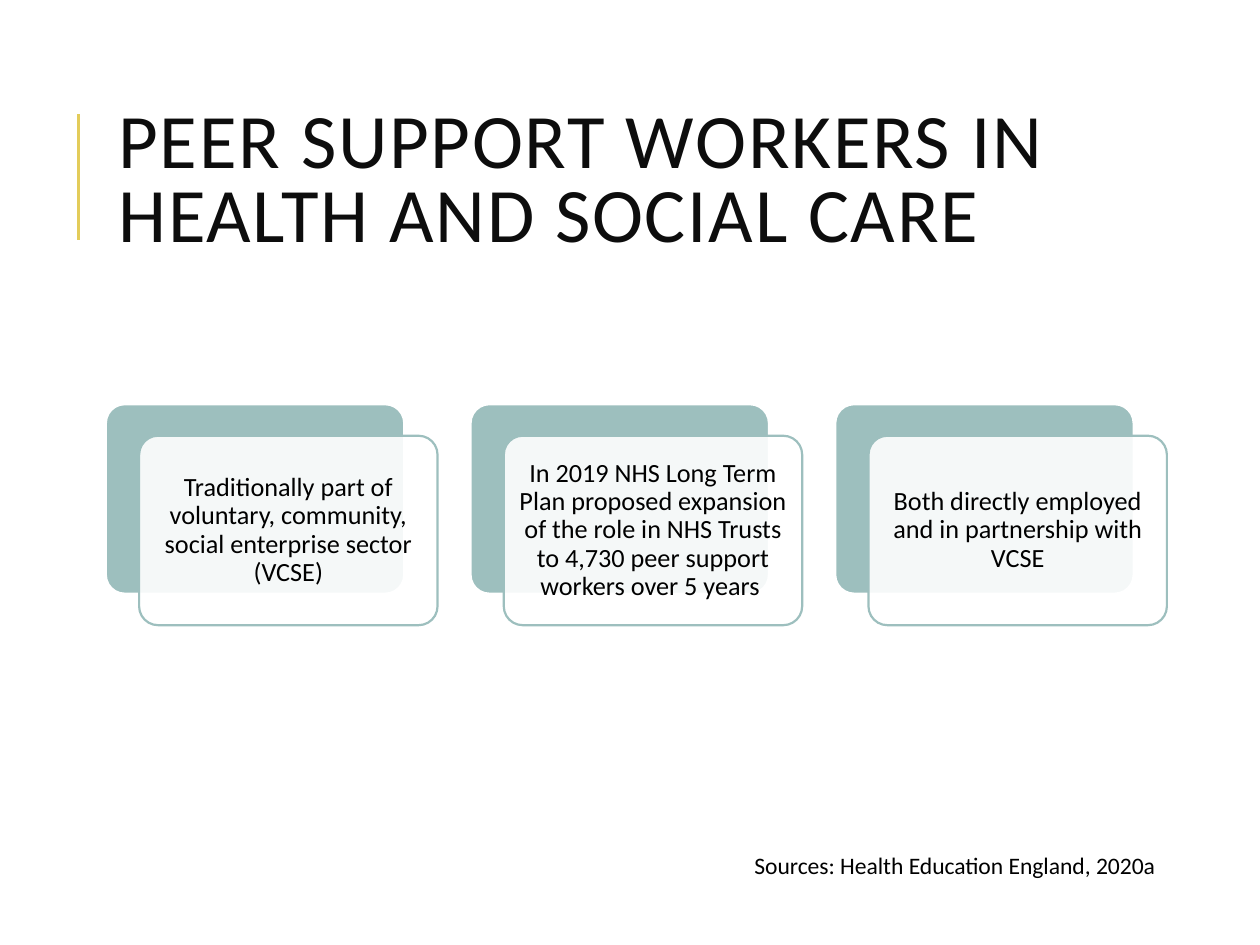
from lxml.etree import SubElement
from pptx import Presentation
from pptx.dml.color import RGBColor
from pptx.enum.shapes import MSO_CONNECTOR, MSO_SHAPE
from pptx.enum.text import MSO_ANCHOR, MSO_AUTO_SIZE, PP_ALIGN
from pptx.oxml.ns import qn
from pptx.util import Pt

TEAL = RGBColor(0x9D, 0xBF, 0xBE)
GOLD = RGBColor(0xE3, 0xCC, 0x5A)
WHITE = RGBColor(0xFF, 0xFF, 0xFF)
INK = RGBColor(0x0D, 0x0D, 0x0D)
BLACK = RGBColor(0, 0, 0)

CARD_LEFT, CARD_TOP = 60.5, 231
CARD_WIDTH, CARD_HEIGHT = 170.5, 108.25
CARD_PITCH = 208.4
FRONT_SHIFT_X, FRONT_SHIFT_Y = 19, 18
CARD_TEXTS = [
    "Traditionally part of voluntary, community, social enterprise sector (VCSE)",
    "In 2019 NHS Long Term Plan proposed expansion of the role in NHS Trusts "
    "to 4,730 peer support workers over 5 years ",
    "Both directly employed and in partnership with VCSE",
]


def style_run(para, size, color):
    span = para.runs[0]
    span.font.name = "Calibri"
    span.font.size = Pt(size)
    span.font.color.rgb = color
    return span


def add_card(page, left, top, fill, outline):
    card = page.shapes.add_shape(MSO_SHAPE.ROUNDED_RECTANGLE, Pt(left), Pt(top),
                                 Pt(CARD_WIDTH), Pt(CARD_HEIGHT))
    card.adjustments[0] = 0.1
    card.shadow.inherit = False
    card.fill.solid()
    card.fill.fore_color.rgb = fill
    card.line.color.rgb = outline
    card.line.width = Pt(1.25)
    return card


deck = Presentation()
deck.slide_width, deck.slide_height = Pt(720), Pt(540)
page = deck.slides.add_slide(deck.slide_layouts[5])

rule = page.shapes.add_connector(MSO_CONNECTOR.STRAIGHT, Pt(45), Pt(137), Pt(45), Pt(65))
rule.line.color.rgb = GOLD
rule.line.width = Pt(1.5)
SubElement(rule._element.spPr, qn("a:effectLst"))

title = page.shapes.title
title.left, title.top, title.width, title.height = Pt(60.5), Pt(46), Pt(574), Pt(118)
frame = title.text_frame
frame.text = "PEER SUPPORT WORKERS IN HEALTH AND SOCIAL CARE"
frame.word_wrap = True
frame.auto_size = MSO_AUTO_SIZE.NONE
frame.vertical_anchor = MSO_ANCHOR.MIDDLE
para = frame.paragraphs[0]
para.alignment = PP_ALIGN.LEFT
para.line_spacing = 0.8
span = style_run(para, 44, INK)
span.font._element.set("spc", "100")

for index, text in enumerate(CARD_TEXTS):
    left = CARD_LEFT + index * CARD_PITCH
    add_card(page, left, CARD_TOP, TEAL, WHITE)
    front = add_card(page, left + FRONT_SHIFT_X, CARD_TOP + FRONT_SHIFT_Y, WHITE, TEAL)
    color = front._element.spPr.find(qn("a:solidFill")).find(qn("a:srgbClr"))
    SubElement(color, qn("a:alpha"), val="90000")
    frame = front.text_frame
    frame.text = text
    frame.word_wrap = True
    frame.vertical_anchor = MSO_ANCHOR.MIDDLE
    frame.margin_left = frame.margin_right = Pt(4.5)
    frame.margin_top = frame.margin_bottom = Pt(4.5)
    para = frame.paragraphs[0]
    para.alignment = PP_ALIGN.CENTER
    para.line_spacing = 0.9
    style_run(para, 15, BLACK)

source = page.shapes.add_textbox(Pt(424), Pt(482.5), Pt(252), Pt(23.5))
frame = source.text_frame
frame.text = "Sources: Health Education England, 2020a"
frame.word_wrap = False
frame.auto_size = MSO_AUTO_SIZE.SHAPE_TO_FIT_TEXT
style_run(frame.paragraphs[0], 13.5, BLACK)

deck.save("out.pptx")
